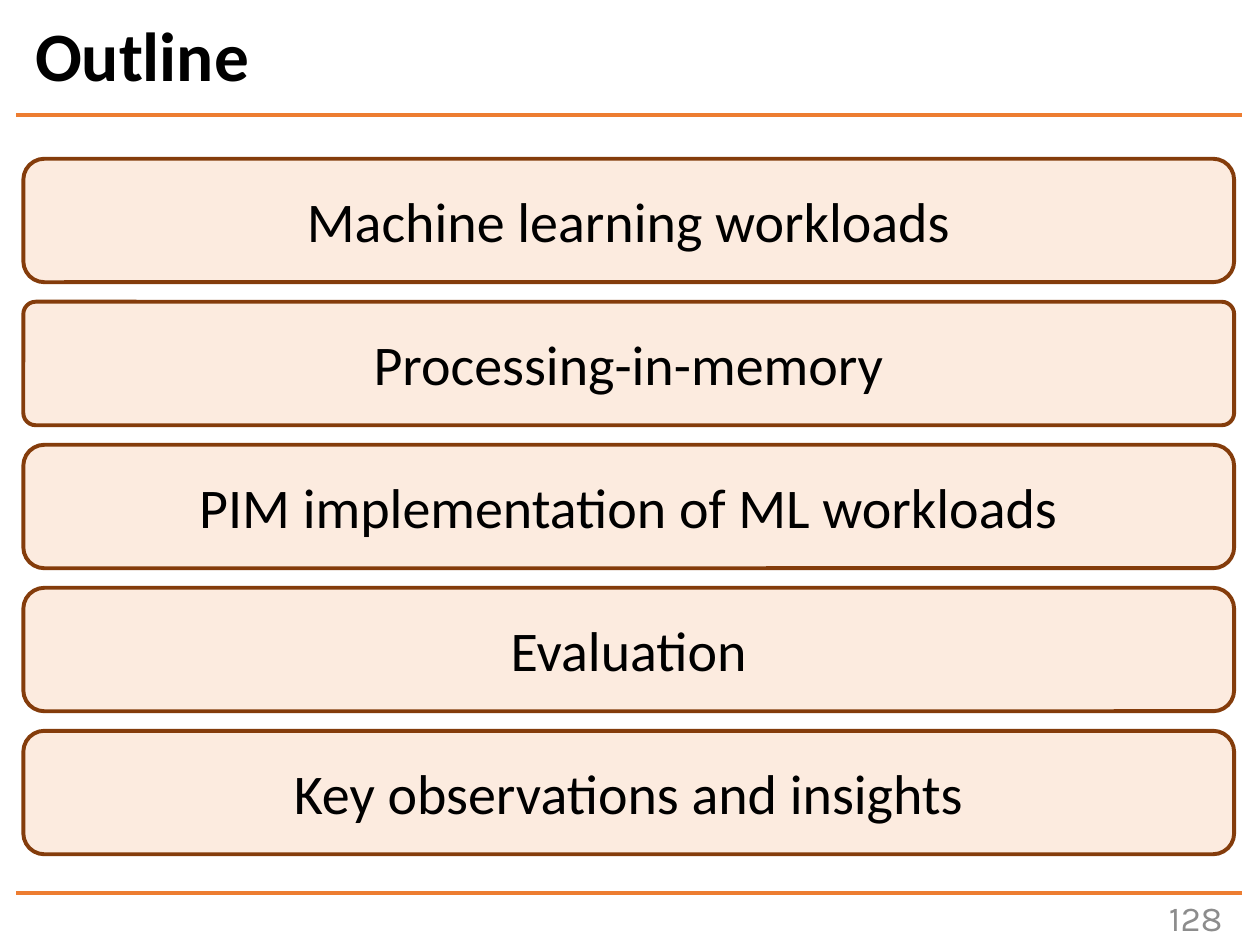
from lxml import etree
from pptx import Presentation
from pptx.dml.color import RGBColor
from pptx.enum.shapes import MSO_CONNECTOR, MSO_SHAPE
from pptx.enum.text import MSO_ANCHOR, PP_ALIGN
from pptx.oxml.ns import qn
from pptx.util import Inches, Pt

LEFT, CENTER, RIGHT = PP_ALIGN.LEFT, PP_ALIGN.CENTER, PP_ALIGN.RIGHT
MIDDLE = MSO_ANCHOR.MIDDLE
STRAIGHT = MSO_CONNECTOR.STRAIGHT
ROUNDED = MSO_SHAPE.ROUNDED_RECTANGLE

COLORS = {
    "text": "000000",
    "number": "8C8C8C",
    "rule": "ED7D31",
    "box": "F4B183",
    "border": "843C0B",
}
RGB = {name: RGBColor.from_string(value) for name, value in COLORS.items()}

TOPICS = [
    "Machine learning workloads",
    "Processing-in-memory",
    "PIM implementation of ML workloads",
    "Evaluation",
    "Key observations and insights",
]
DEFAULT_CORNER, TIGHT_CORNER = 0.17, 0.1
BOX_LEFT, BOX_TOP, BOX_WIDTH, BOX_HEIGHT = 0.185, 1.26, 9.61, 0.98
ROW_STEP = 1.135


def write(sp, text, size, font="Calibri", color="text", bold=False,
          align=LEFT, spacing=None):
    tf = sp.text_frame
    tf.word_wrap = True
    tf.vertical_anchor = MIDDLE
    p = tf.paragraphs[0]
    p.alignment = align
    p.line_spacing = spacing
    r = p.add_run()
    r.text = text
    r.font.name = font
    r.font.size = Pt(size)
    r.font.bold = bold
    r.font.color.rgb = RGB[color]


prs = Presentation()
prs.slide_width, prs.slide_height = Inches(10), Inches(7.5)
s = prs.slides.add_slide(prs.slide_layouts[6])

# Page number and the rules above and below the content
number = s.shapes.add_textbox(Inches(8.72), Inches(7.08), Inches(1.08), Inches(0.4))
write(number, "128", 20, font="Karla", color="number", align=RIGHT)

for y in (0.91, 7.09):
    rule = s.shapes.add_connector(STRAIGHT, Inches(0.13), Inches(y), Inches(9.86), Inches(y))
    rule.line.color.rgb = RGB["rule"]
    rule.line.width = Pt(2.25)
    etree.SubElement(rule._element.spPr, qn("a:effectLst"))

title = s.shapes.add_textbox(Inches(0.18), Inches(0.14), Inches(9.73), Inches(0.66))
write(title, "Outline", 39.6, bold=True, spacing=0.9)

# One translucent box per topic, in equal rows
for row, topic in enumerate(TOPICS):
    box = s.shapes.add_shape(ROUNDED, Inches(BOX_LEFT), Inches(BOX_TOP + row * ROW_STEP),
                             Inches(BOX_WIDTH), Inches(BOX_HEIGHT))
    box.adjustments[0] = TIGHT_CORNER if row == 1 else DEFAULT_CORNER
    box.shadow.inherit = False
    box.fill.solid()
    box.fill.fore_color.rgb = RGB["box"]
    fill = box._element.spPr.find(qn("a:solidFill"))
    etree.SubElement(fill[0], qn("a:alpha"), val="25000")
    box.line.color.rgb = RGB["border"]
    box.line.width = Pt(2.25)
    write(box, topic, 32, align=CENTER)

prs.save("out.pptx")
